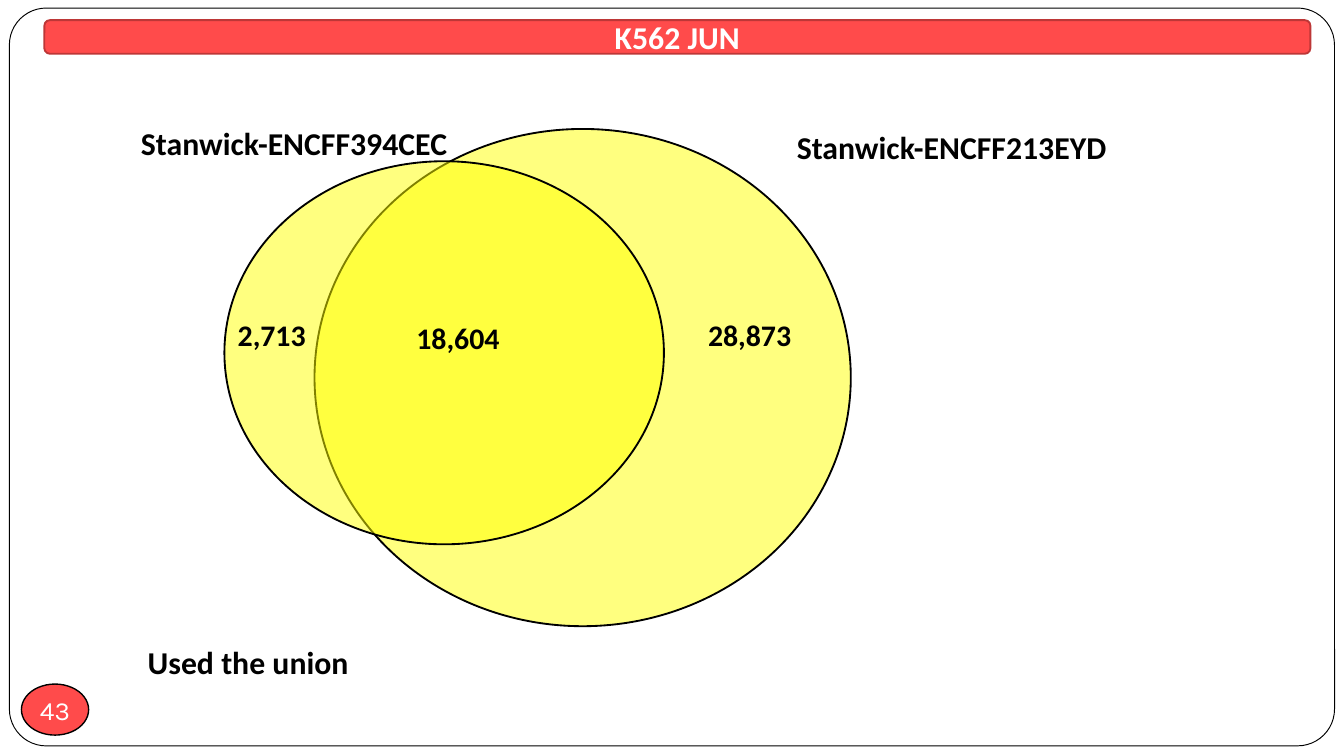
from lxml.etree import SubElement
from pptx import Presentation
from pptx.dml.color import RGBColor
from pptx.enum.shapes import MSO_SHAPE
from pptx.enum.text import MSO_ANCHOR, MSO_AUTO_SIZE, PP_ALIGN
from pptx.oxml.ns import qn
from pptx.util import Inches, Pt

# Grid of square cells, ten to the inch
CELL = Inches(0.1)
COLS, ROWS = 100, 56.25

BLACK = RGBColor(0x00, 0x00, 0x00)
WHITE = RGBColor(0xFF, 0xFF, 0xFF)
RED = RGBColor(0xFF, 0x4B, 0x4B)
DARK = RGBColor(0xBD, 0x37, 0x37)
YELLOW = RGBColor(0xFF, 0xFF, 0x00)


def cells(*nums):
    return [round(num * CELL) for num in nums]


def within(box, left, top, width, height):
    """Shift a part, given in cells, to the origin of its box."""
    return box[0] + left, box[1] + top, width, height


def write(shape, text, size=17, font="Calibri", color=BLACK, bold=True,
          align=PP_ALIGN.LEFT, anchor=MSO_ANCHOR.TOP, inset=None):
    frame = shape.text_frame
    frame.text = text
    frame.word_wrap = False
    frame.auto_size = MSO_AUTO_SIZE.NONE
    frame.vertical_anchor = anchor
    if inset is not None:
        frame.margin_left = frame.margin_right = inset
        frame.margin_top = frame.margin_bottom = inset
    para = frame.paragraphs[0]
    para.alignment = align
    style = para.runs[0].font
    style.name, style.size, style.bold = font, Pt(size), bold
    style.color.rgb = color


def draw(shapes, kind, box, fill, line=BLACK, width=1, alpha=None):
    shape = shapes.add_shape(kind, *cells(*box))
    shape.shadow.inherit = False
    shape.fill.solid()
    shape.fill.fore_color.rgb = fill
    shape.line.color.rgb = line
    shape.line.width = Pt(width)
    if alpha:
        tint = shape.element.spPr.find(".//" + qn("a:srgbClr"))
        SubElement(tint, qn("a:alpha"), val=str(alpha * 1000))
    return shape


def label(slide, box, text, **style):
    write(slide.shapes.add_textbox(*cells(*box)), text, **style)


def add_frame(slide, box):
    frame = draw(slide.shapes, MSO_SHAPE.ROUNDED_RECTANGLE, box, WHITE, width=0.5)
    frame.adjustments[0] = 0.05


def add_badge(slide, box, text):
    badge = draw(slide.shapes, MSO_SHAPE.OVAL, box, RED, width=0.75)
    write(badge, text, size=14, font="Karla", color=WHITE, bold=False,
          align=PP_ALIGN.CENTER, anchor=MSO_ANCHOR.MIDDLE, inset=0)


def add_title(slide, box, text):
    # Rounded bar, with the title in front of it
    draw(slide.shapes, MSO_SHAPE.ROUNDED_RECTANGLE, box, RED, DARK)
    title = slide.shapes.title
    title.left, title.top, title.width, title.height = cells(*box)
    slide.shapes.element.append(title.element)
    write(title, text, color=WHITE, align=PP_ALIGN.CENTER,
          anchor=MSO_ANCHOR.MIDDLE, inset=0)


def add_venn(slide, box, counts, names):
    # Overlapping sets: the larger one behind
    group = slide.shapes.add_group_shape()
    for part in ((6.7, 0, 39.9, 37), (0, 2.4, 32.7, 28.5)):
        draw(group.shapes, MSO_SHAPE.OVAL, within(box, *part), YELLOW, alpha=50)

    # Counts: shared, right only, left only
    spots = ((13.3, 13.7, 8.3, 3.7), (35, 13.5, 8.3, 3.7), (0, 13.5, 7.2, 3.7))
    for count, spot in zip(counts, spots):
        label(slide, within(box, *spot), count, size=16)

    # Names of the sets
    spots = ((-7.2, -0.9, 24.7, 3.9), (41.6, -0.6, 24.9, 3.9))
    for name, spot in zip(names, spots):
        label(slide, within(box, *spot), name)


def main():
    deck = Presentation()
    deck.slide_width, deck.slide_height = cells(COLS, ROWS)
    slide = deck.slides.add_slide(deck.slide_layouts[5])

    add_frame(slide, (0.7, 0.6, COLS - 1.4, ROWS - 1.35))
    add_badge(slide, (1.6, 50.9, 5, 3.8), "43")
    add_title(slide, (3.3, 1.5, 94.2, 2.5), "K562 JUN")
    add_venn(slide, (16.7, 9.6, 46.6, 37),
             ("18,604", "28,873", "2,713"),
             ("Stanwick-ENCFF394CEC", "Stanwick-ENCFF213EYD"))
    label(slide, (10, 47.3, 17.1, 3.9), "Used the union")

    deck.save("out.pptx")


if __name__ == "__main__":
    main()
